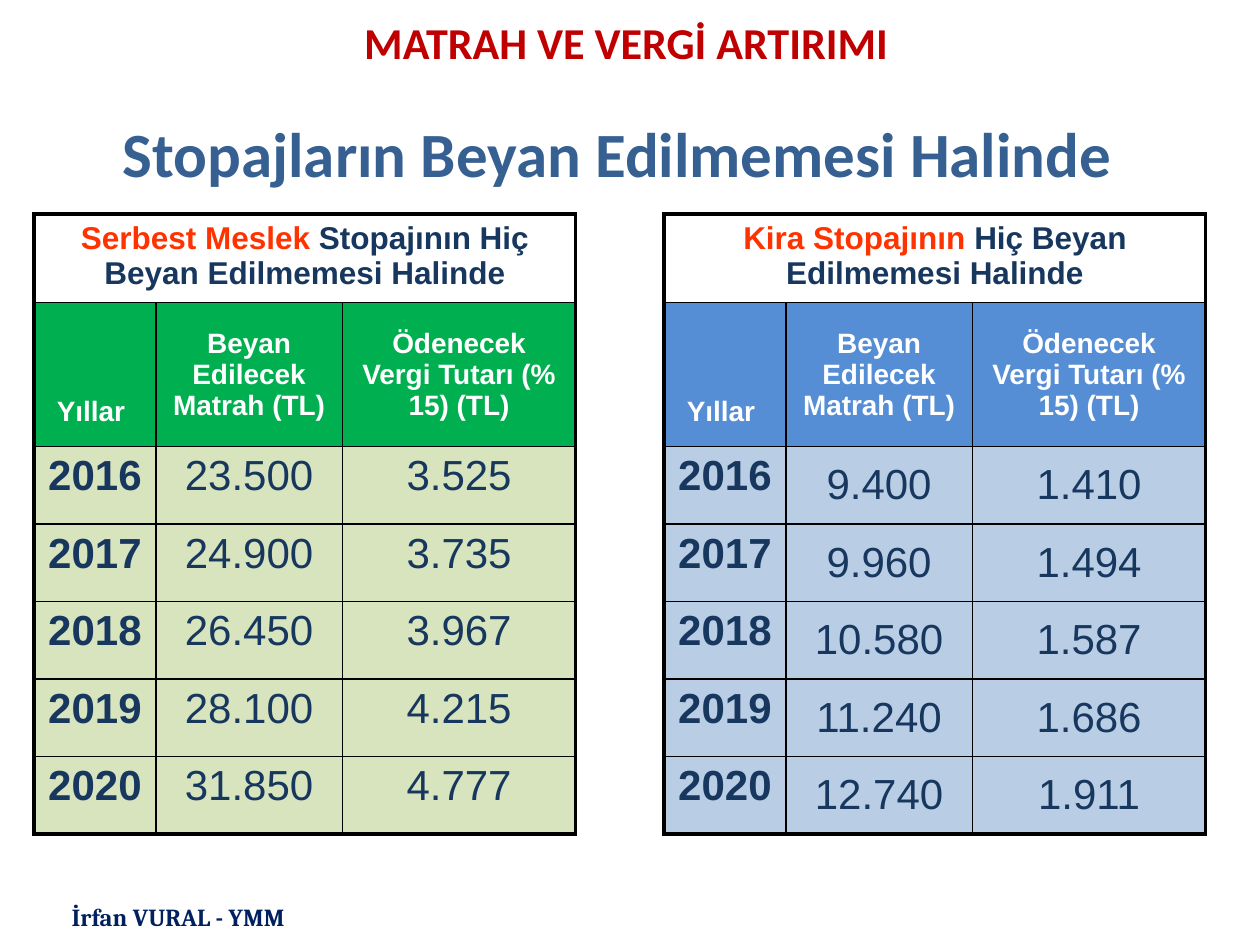
from dataclasses import dataclass
from lxml import etree
from pptx import Presentation
from pptx.dml.color import RGBColor
from pptx.enum.text import MSO_ANCHOR, MSO_AUTO_SIZE, PP_ALIGN
from pptx.oxml.ns import qn
from pptx.util import Pt


@dataclass
class Theme:
    title: str = "C00000"
    sub: str = "376092"
    foot: str = "002060"
    mark: str = "FF3300"
    ink: str = "17375E"
    light: str = "FFFFFF"
    line: str = "000000"
    title_size: float = 25.2
    sub_size: float = 36
    foot_size: float = 14
    cap_size: float = 18
    head_size: float = 16
    data_size: float = 24


theme = Theme()


def style(run, font, size, color, bold=True):
    run.font.name = font
    run.font.size = Pt(size)
    run.font.bold = bold
    run.font.color.rgb = RGBColor.from_string(color)


def border(cell, widths):
    props = cell._tc.get_or_add_tcPr()
    for side, width in zip("LRTB", widths):
        line = etree.SubElement(props, qn(f"a:ln{side}"), w=str(Pt(width)))
        fill = etree.SubElement(line, qn("a:solidFill"))
        etree.SubElement(fill, qn("a:srgbClr"), val=theme.line)


deck = Presentation()
deck.slide_width, deck.slide_height = Pt(720), Pt(540)
slide = deck.slides.add_slide(deck.slide_layouts[1])

# Footer
foot = slide.shapes.add_textbox(Pt(33.84), Pt(511.92), Pt(221.04), Pt(24.48))
foot.text_frame.word_wrap = True
foot.text_frame.text = "İrfan VURAL - YMM"
style(foot.text_frame.paragraphs[0].runs[0], "Cambria", theme.foot_size, theme.foot)

# Title
title = slide.shapes.title
title.left, title.top, title.width, title.height = Pt(33.84), Pt(22.32), Pt(648), Pt(3.6)
frame = title.text_frame
frame.text = "MATRAH VE VERGİ ARTIRIMI"
frame.auto_size = MSO_AUTO_SIZE.NONE
frame.vertical_anchor = MSO_ANCHOR.MIDDLE
frame.paragraphs[0].alignment = PP_ALIGN.CENTER
style(frame.paragraphs[0].runs[0], "Calibri", theme.title_size, theme.title)

# Subtitle: body text without a bullet
body = slide.placeholders[1]
body.left, body.top, body.width, body.height = Pt(36), Pt(61.92), Pt(667.44), Pt(420.48)
frame = body.text_frame
frame.text = "Stopajların Beyan Edilmemesi Halinde"
frame.auto_size = MSO_AUTO_SIZE.NONE
para = frame.paragraphs[0]
props = para._p.get_or_add_pPr()
props.set("marL", str(Pt(27)))
props.set("indent", "0")
etree.SubElement(props, qn("a:buNone"))
style(para.runs[0], "Calibri", theme.sub_size, theme.sub)

# Tables: left, caption parts, head fill, row fill, number anchor, numbers
years = ["2016", "2017", "2018", "2019", "2020"]
heads = ["Yıllar ", "Beyan Edilecek Matrah (TL)", "Ödenecek Vergi Tutarı (% 15) (TL)"]
cols = [69.6, 106.6, 133.4]
rows = [50.5, 82.3] + [44.3] * len(years)
tables = [
    (19.44, ("Serbest Meslek ", "Stopajının Hiç Beyan Edilmemesi Halinde"),
     "00B050", "D7E4BD", MSO_ANCHOR.TOP,
     ["23.500", "24.900", "26.450", "28.100", "31.850"],
     ["3.525", "3.735", "3.967", "4.215", "4.777"]),
    (379.44, ("Kira Stopajının ", "Hiç Beyan Edilmemesi Halinde"),
     "558ED5", "B9CDE5", MSO_ANCHOR.MIDDLE,
     ["9.400", "9.960", "10.580", "11.240", "12.740"],
     ["1.410", "1.494", "1.587", "1.686", "1.911"]),
]
thin, thick = 1, 2.25

for left, caption, dark, pale, anchor, bases, taxes in tables:
    table = slide.shapes.add_table(len(rows), len(cols), Pt(left), Pt(122.4),
                                   Pt(sum(cols)), Pt(sum(rows))).table
    table.first_row = table.horz_banding = False
    for col, width in zip(table.columns, cols):
        col.width = Pt(width)
    for row, height in zip(table.rows, rows):
        row.height = Pt(height)
    table.cell(0, 0).merge(table.cell(0, 2))

    # Frame, fill and text of each cell
    grid = [["", "", ""], heads, *zip(years, bases, taxes)]
    for r, texts in enumerate(grid):
        for c, text in enumerate(texts):
            cell = table.cell(r, c)
            border(cell, [thick if edge else thin for edge in
                          (c == 0, c == 2 or r == 0, r == 0, r == len(rows) - 1)])
            if r == 0:
                cell.fill.background()
                continue
            cell.fill.solid()
            cell.fill.fore_color.rgb = RGBColor.from_string(dark if r == 1 else pale)
            cell.text_frame.text = text
            para = cell.text_frame.paragraphs[0]
            para.alignment = PP_ALIGN.CENTER
            if r == 1:
                cell.vertical_anchor = MSO_ANCHOR.MIDDLE if c else MSO_ANCHOR.BOTTOM
                style(para.runs[0], "Arial", theme.head_size, theme.light)
            else:
                cell.vertical_anchor = anchor if c else MSO_ANCHOR.TOP
                style(para.runs[0], "Arial", theme.data_size, theme.ink, c == 0)
    table.cell(1, 0).margin_bottom = Pt(11)

    # Two-colour caption
    para = table.cell(0, 0).text_frame.paragraphs[0]
    para.alignment = PP_ALIGN.CENTER
    for text, color in zip(caption, (theme.mark, theme.ink)):
        run = para.add_run()
        run.text = text
        style(run, "Arial", theme.cap_size, color)

deck.save("out.pptx")
